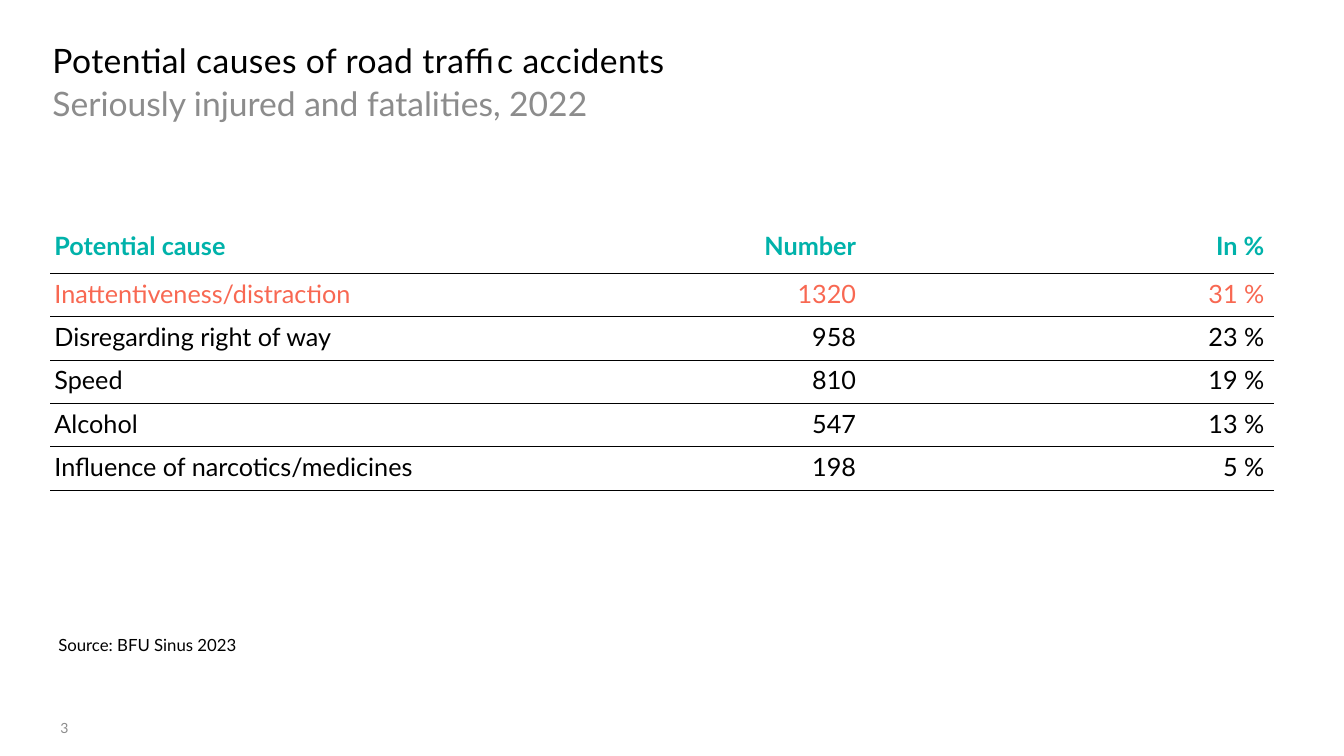
"""Build a slide with a table of the potential causes of road traffic accidents."""
from dataclasses import dataclass

from lxml import etree
from pptx import Presentation
from pptx import util as u
from pptx.dml.color import RGBColor
from pptx.enum import text
from pptx.oxml import ns


@dataclass(frozen=True)
class Theme:
    """Colours, font and type sizes of the slide."""
    font: str = "Lato"
    ink: str = "000000"
    muted: str = "8C8C8C"
    header: str = "00B2AA"
    accent: str = "F86852"
    title: int = 24
    table: int = 18
    source: int = 12
    number: int = 10
    rule: float = 0.5


THEME = Theme()
ROWS = [
    ("Potential cause", "Number", "In %"),
    ("Inattentiveness/distraction", "1320", "31 %"),
    ("Disregarding right of way", "958", "23 %"),
    ("Speed", "810", "19 %"),
    ("Alcohol", "547", "13 %"),
    ("Influence of narcotics/medicines", "198", "5 %"),
    ("", "", ""),
]
COLUMN_WIDTHS = (6.43, 1.66, 4.05)
HEADER_HEIGHT, ROW_HEIGHT = 0.47, 0.43


def format_runs(p, size, color, bold=False):
    """Format every run of a paragraph."""
    for r in p.runs:
        r.font.name = THEME.font
        r.font.size = u.Pt(size)
        r.font.bold = bold
        r.font.color.rgb = RGBColor.from_string(color)


def fill_text(sp, content, size, color, inset=(0, 0)):
    """Put one left-aligned paragraph in a shape and return it."""
    tf = sp.text_frame
    tf.word_wrap = True
    tf.auto_size = text.MSO_AUTO_SIZE.NONE
    tf.vertical_anchor = text.MSO_ANCHOR.TOP
    tf.margin_left = tf.margin_right = u.Inches(inset[0])
    tf.margin_top = tf.margin_bottom = u.Inches(inset[1])
    tf.text = content
    p = tf.paragraphs[0]
    p.alignment = text.PP_ALIGN.LEFT
    format_runs(p, size, color)
    return p


def add_title(s, content):
    """Place and format the title placeholder."""
    sp = s.shapes.title
    sp.left, sp.top, sp.width, sp.height = map(u.Inches, (0.52, 0.4, 12.28, 0.35))
    p = fill_text(sp, content, THEME.title, THEME.ink)
    p.line_spacing = 1.0
    p.space_before = u.Pt(0)
    p.runs[0].font._element.set("spc", "30")


def add_text(s, box, content, size, color, inset=(0, 0)):
    """Add a text box and return its paragraph."""
    sp = s.shapes.add_textbox(*map(u.Inches, box))
    return fill_text(sp, content, size, color, inset)


def set_border(cell, side, visible):
    """Draw or clear one side of a cell."""
    props = cell._tc.get_or_add_tcPr()
    line = etree.SubElement(props, ns.qn(f"a:ln{side}"), w=str(u.Pt(THEME.rule)))
    if visible:
        fill = etree.SubElement(line, ns.qn("a:solidFill"))
        etree.SubElement(fill, ns.qn("a:srgbClr"), val=THEME.ink)
    else:
        etree.SubElement(line, ns.qn("a:noFill"))


def format_cell(cell, row, col):
    """Style a cell according to its place in the table."""
    last = len(ROWS) - 1
    for side, visible in (("L", False), ("R", False), ("T", row > 0), ("B", row < last)):
        set_border(cell, side, visible)
    cell.fill.background()
    cell.margin_left, cell.margin_right = u.Inches(0.04), u.Inches(0.1)
    cell.margin_top = cell.margin_bottom = u.Inches(0.05)
    p = cell.text_frame.paragraphs[0]
    p.alignment = text.PP_ALIGN.RIGHT if col else text.PP_ALIGN.LEFT
    color = {0: THEME.header, 1: THEME.accent}.get(row, THEME.ink)
    format_runs(p, THEME.table, color, bold=row == 0)


def add_cause_table(s):
    """Add the table of causes."""
    heights = [HEADER_HEIGHT] + [ROW_HEIGHT] * (len(ROWS) - 1)
    box = (0.5, 2.24, sum(COLUMN_WIDTHS), sum(heights))
    table = s.shapes.add_table(len(ROWS), len(COLUMN_WIDTHS), *map(u.Inches, box)).table
    table.horz_banding = table.first_row = False
    for column, width in zip(table.columns, COLUMN_WIDTHS):
        column.width = u.Inches(width)
    for row, (values, height) in enumerate(zip(ROWS, heights)):
        table.rows[row].height = u.Inches(height)
        for col, value in enumerate(values):
            cell = table.cell(row, col)
            cell.text = value
            format_cell(cell, row, col)


def main():
    """Build and save the presentation."""
    prs = Presentation()
    prs.slide_width, prs.slide_height = u.Inches(13.33), u.Inches(7.5)
    s = prs.slides.add_slide(prs.slide_layouts[5])
    add_title(s, "Potential causes of road traffic accidents")
    add_text(s, (0.6, 7.14, 0.89, 0.18), "3", THEME.number, THEME.muted)
    p = add_text(s, (0.52, 0.8, 12.28, 0.39), "Seriously injured and fatalities, 2022",
                 THEME.title, THEME.muted)
    p.line_spacing = 1.05
    add_cause_table(s)
    add_text(s, (0.48, 6.25, 12.43, 0.3), "Source: BFU Sinus 2023",
             THEME.source, THEME.ink, inset=(0.1, 0.05))
    prs.save("out.pptx")


if __name__ == "__main__":
    main()
